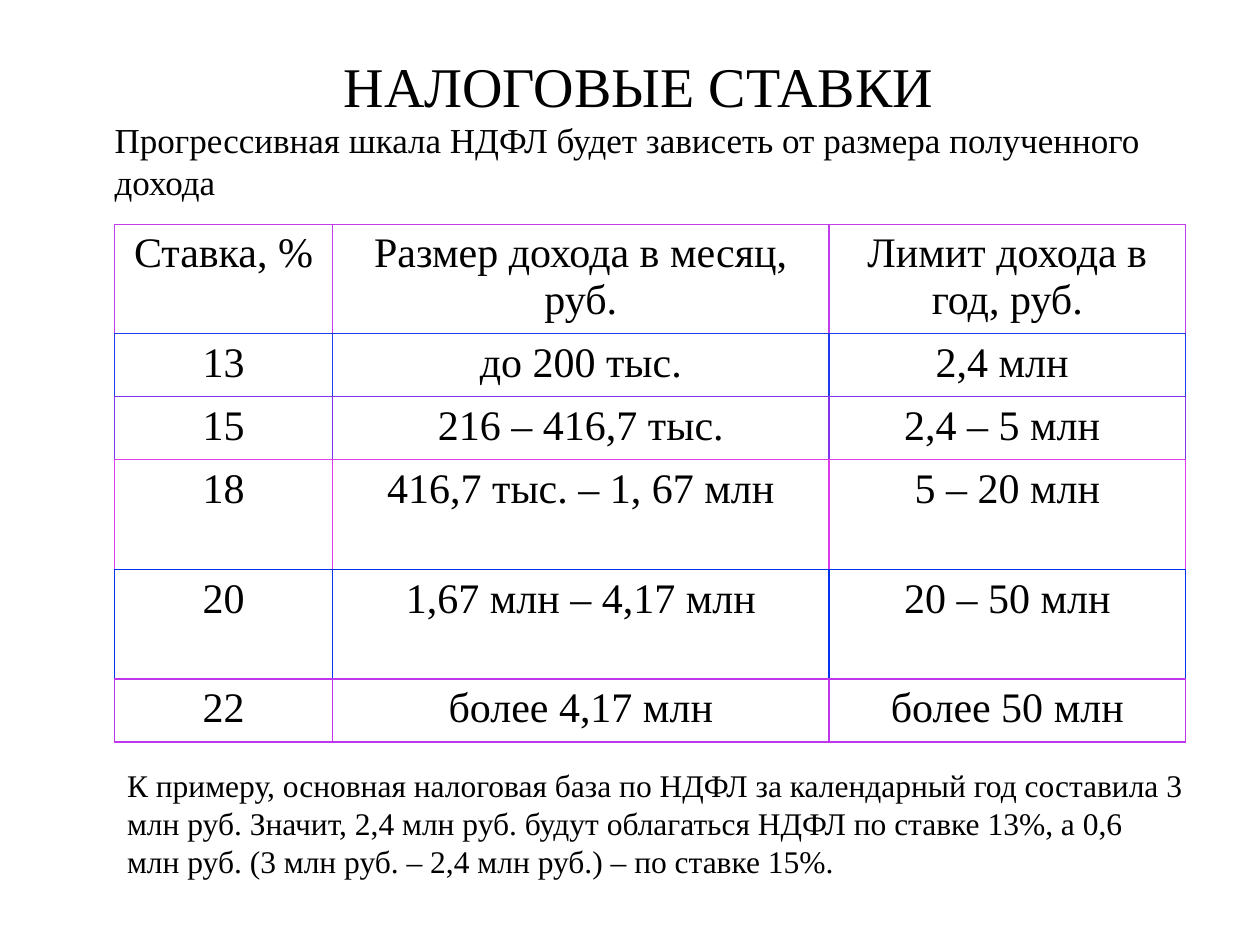
import dataclasses

import lxml.etree
import pptx
import pptx.dml.color
import pptx.enum.shapes
import pptx.enum.text
import pptx.oxml.ns
import pptx.util

ALIGN = pptx.enum.text.PP_ALIGN


@dataclasses.dataclass(frozen=True)
class Theme:
    font: str = "Times New Roman"
    text: str = "000000"
    background: str = "FFFFFF"
    title_size: int = 32
    subtitle_size: int = 20
    table_size: int = 24
    note_size: int = 18
    border_width: float = 0.75
    row_borders: tuple = ("C03CED", "203AED", "8034ED", "E03AED", "0033ED", "C036ED")


@dataclasses.dataclass(frozen=True)
class Box:
    left: int
    top: int
    width: int
    height: int


THEME = Theme()
COLUMN_SHARES = (1.73, 3.94, 2.83)
ROW_SHARES = (0.87, 0.5, 0.5, 0.87, 0.87, 0.5)
RATES = (
    ("Ставка, %", "Размер дохода в месяц, руб.", "Лимит дохода в год, руб."),
    ("13", "до 200 тыс.", "2,4 млн "),
    ("15", "216 – 416,7 тыс.", "2,4 – 5 млн "),
    ("18", "416,7 тыс. – 1, 67 млн", "5 – 20 млн"),
    ("20", "1,67 млн – 4,17 млн", "20 – 50 млн"),
    ("22", "более 4,17 млн", "более 50 млн"),
)
TITLE = "НАЛОГОВЫЕ СТАВКИ "
SUBTITLE = "Прогрессивная шкала НДФЛ будет зависеть от размера полученного дохода"
NOTE = (
    "К примеру, основная налоговая база по НДФЛ за календарный год составила "
    "3 млн руб. Значит, 2,4 млн руб. будут облагаться НДФЛ по ставке 13%, а "
    "0,6 млн руб. (3 млн руб. – 2,4 млн руб.) – по ставке 15%."
)


def share_box(presentation, left, top, width, height):
    return Box(
        round(presentation.slide_width * left),
        round(presentation.slide_height * top),
        round(presentation.slide_width * width),
        round(presentation.slide_height * height),
    )


def write_paragraph(paragraph, text, size, alignment):
    paragraph.text = text
    paragraph.alignment = alignment
    for run in paragraph.runs:
        run.font.name = THEME.font
        run.font.size = pptx.util.Pt(size)
        run.font.color.rgb = pptx.dml.color.RGBColor.from_string(THEME.text)


def set_borders(cell, side_colors):
    properties = cell._tc.get_or_add_tcPr()
    qualify = pptx.oxml.ns.qn
    for position, (side, color) in enumerate(side_colors.items()):
        line = lxml.etree.Element(qualify(f"a:ln{side}"))
        line.set("w", str(pptx.util.Pt(THEME.border_width)))
        fill = lxml.etree.SubElement(line, qualify("a:solidFill"))
        lxml.etree.SubElement(fill, qualify("a:srgbClr")).set("val", color)
        properties.insert(position, line)


def add_heading(slide, box):
    shape = slide.shapes.add_shape(
        pptx.enum.shapes.MSO_SHAPE.RECTANGLE, box.left, box.top, box.width, box.height
    )
    shape.shadow.inherit = False
    shape.fill.solid()
    shape.fill.fore_color.rgb = pptx.dml.color.RGBColor.from_string(THEME.background)
    shape.line.fill.background()
    frame = shape.text_frame
    frame.word_wrap = True
    frame.vertical_anchor = pptx.enum.text.MSO_ANCHOR.MIDDLE
    frame.margin_left = frame.margin_right = frame.margin_top = frame.margin_bottom = 0
    write_paragraph(frame.paragraphs[0], TITLE, THEME.title_size, ALIGN.CENTER)
    write_paragraph(frame.add_paragraph(), SUBTITLE, THEME.subtitle_size, ALIGN.LEFT)


def add_rate_table(slide, box):
    table = slide.shapes.add_table(
        len(RATES), len(COLUMN_SHARES), box.left, box.top, box.width, box.height
    ).table
    table.first_row = False
    table.horz_banding = False
    for column, share in zip(table.columns, COLUMN_SHARES):
        column.width = round(box.width * share / sum(COLUMN_SHARES))
    for row, share in zip(table.rows, ROW_SHARES):
        row.height = round(box.height * share / sum(ROW_SHARES))
    lower_borders = THEME.row_borders[1:] + THEME.row_borders[-1:]
    for row, texts, color, lower in zip(table.rows, RATES, THEME.row_borders, lower_borders):
        for cell, text in zip(row.cells, texts):
            cell.fill.background()
            write_paragraph(cell.text_frame.paragraphs[0], text, THEME.table_size, ALIGN.CENTER)
            set_borders(cell, {"L": color, "R": color, "T": color, "B": lower})


def add_note(slide, box):
    shape = slide.shapes.add_textbox(box.left, box.top, box.width, box.height)
    shape.text_frame.word_wrap = True
    write_paragraph(shape.text_frame.paragraphs[0], NOTE, THEME.note_size, ALIGN.LEFT)


def main():
    presentation = pptx.Presentation()
    presentation.slide_width = pptx.util.Inches(10)
    presentation.slide_height = pptx.util.Inches(7.5)
    slide = presentation.slides.add_slide(presentation.slide_layouts[6])
    left = 0.091
    add_rate_table(slide, share_box(presentation, left, 1.78 / 7.5, 0.85, 4.11 / 7.5))
    add_heading(slide, share_box(presentation, left, 0.41 / 7.5, 0.843, 0.16))
    add_note(slide, share_box(presentation, left, 6.03 / 7.5, 0.858, 1 / 7.5))
    presentation.save("out.pptx")


if __name__ == "__main__":
    main()
